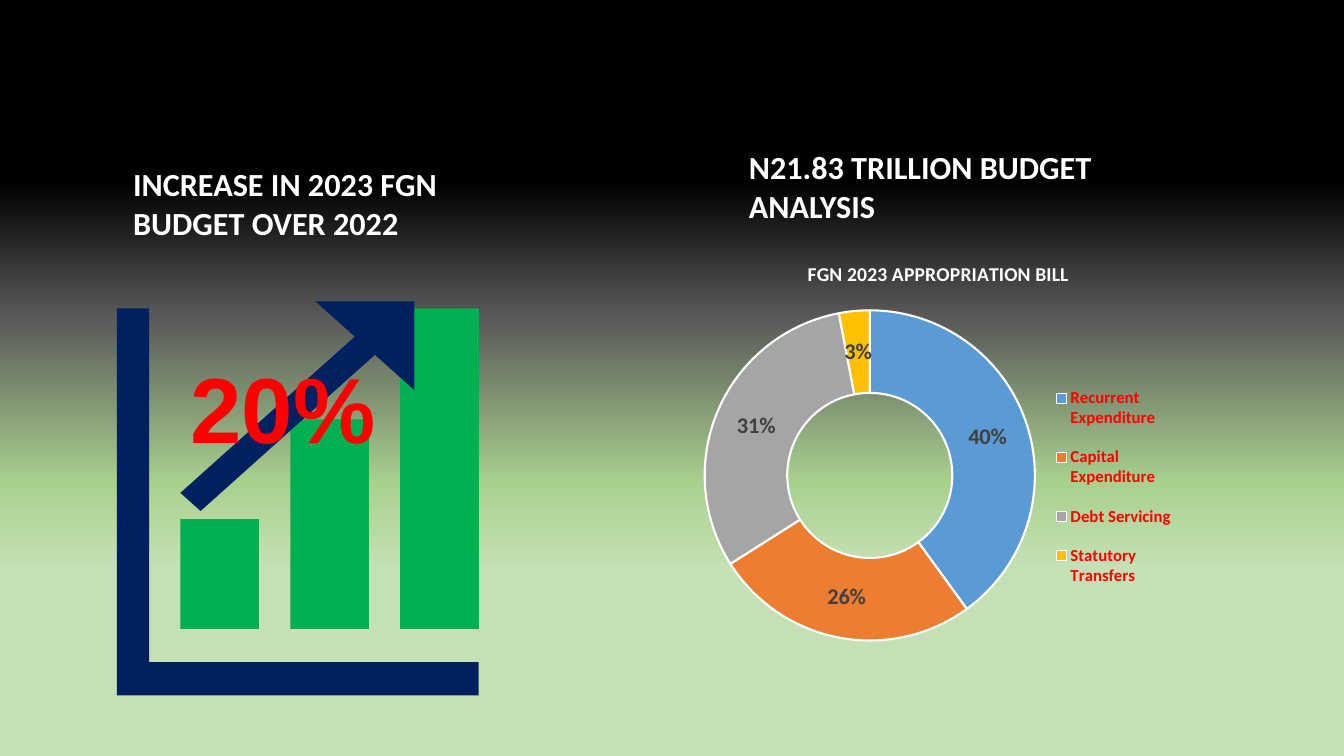
from dataclasses import dataclass

from lxml import etree
from pptx import Presentation
from pptx.chart.data import CategoryChartData
from pptx.dml.color import RGBColor
from pptx.enum.chart import XL_CHART_TYPE, XL_LEGEND_POSITION
from pptx.enum.shapes import MSO_SHAPE
from pptx.enum.text import MSO_ANCHOR, MSO_AUTO_SIZE, PP_ALIGN
from pptx.oxml.ns import qn
from pptx.util import Emu, Inches, Pt

# The slide is a grid of 40 columns by 22.5 rows of square cells.
CELL = Inches(13.333) // 40
COLUMNS, ROWS = 40, 22.5

WHITE = RGBColor(0xFF, 0xFF, 0xFF)
BLACK = RGBColor(0x00, 0x00, 0x00)
RED = RGBColor(0xFF, 0x00, 0x00)
NAVY = RGBColor(0x00, 0x20, 0x60)
GREEN = RGBColor(0x00, 0xB0, 0x50)
BLUE = RGBColor(0x5B, 0x9B, 0xD5)
ORANGE = RGBColor(0xED, 0x7D, 0x31)
GREY = RGBColor(0xA5, 0xA5, 0xA5)
GOLD = RGBColor(0xFF, 0xC0, 0x00)
CHARCOAL = RGBColor(0x40, 0x40, 0x40)
PALE_GREEN = RGBColor(0xC5, 0xE0, 0xB4)
LEAF_GREEN = RGBColor(0xA9, 0xD1, 0x8E)
DARK_GREY = RGBColor(0x59, 0x59, 0x59)

BACKGROUND_STOPS = [(25, PALE_GREEN), (36, LEAF_GREEN), (58, DARK_GREY), (76, BLACK)]


@dataclass(frozen=True)
class Box:
    """A place on the grid, in columns and rows."""
    column: float
    row: float
    width: float
    height: float

    def lengths(self) -> list[Emu]:
        return [cells(n) for n in (self.column, self.row, self.width, self.height)]


@dataclass(frozen=True)
class Expenditure:
    name: str
    share: float
    color: RGBColor


BUDGET = [
    Expenditure("Recurrent Expenditure", 0.40, BLUE),
    Expenditure("Capital Expenditure", 0.26, ORANGE),
    Expenditure("Debt Servicing", 0.31, GREY),
    Expenditure("Statutory Transfers", 0.03, GOLD),
]

INCREASE_HEADING = Box(3.48, 4.8, 10.74, 2.34)
ANALYSIS_HEADING = Box(21.81, 4.29, 13.26, 2.34)
BUDGET_CHART = Box(20.37, 7.2, 15.12, 13.5)

AXES = [(4.44, 9.18), (3.48, 9.18), (3.48, 20.7), (14.25, 20.7), (14.25, 19.71), (4.44, 19.71)]
ARROW = [(12.33, 11.61), (12.33, 8.97), (9.39, 8.97), (10.56, 10.02),
         (5.37, 14.67), (5.97, 15.21), (11.16, 10.56)]
BAR_LEFT, BAR_PITCH, BAR_WIDTH, BAR_BASE = 5.37, 3.27, 2.34, 18.72
BAR_HEIGHTS = [3.27, 6.24, 9.54]


def cells(count: float) -> Emu:
    return Emu(round(count * CELL))


def style_font(font, size: float, color: RGBColor, name: str = "Calibri", bold: bool = True) -> None:
    font.size, font.bold, font.name = Pt(size), bold, name
    font.color.rgb = color


def paint(shape, color: RGBColor) -> None:
    shape.shadow.inherit = False
    shape.fill.solid()
    shape.fill.fore_color.rgb = color
    shape.line.fill.background()


def paint_background(slide) -> None:
    fill = slide.background.fill
    fill.gradient()
    fill.gradient_angle = 90
    stops = next(slide.background._cSld.iter(qn("a:gsLst")))
    for stop in list(stops):
        stops.remove(stop)
    for percent, color in BACKGROUND_STOPS:
        stop = etree.SubElement(stops, qn("a:gs"), pos=str(percent * 1000))
        etree.SubElement(stop, qn("a:srgbClr"), val=str(color))


def write_heading(shape, box: Box, words: str) -> None:
    shape.left, shape.top, shape.width, shape.height = box.lengths()
    frame = shape.text_frame
    frame.word_wrap, frame.auto_size = True, MSO_AUTO_SIZE.NONE
    frame.vertical_anchor = MSO_ANCHOR.MIDDLE
    frame.margin_left, frame.margin_right = Inches(0.16), Inches(0.1)
    frame.margin_top, frame.margin_bottom = Inches(0.1), Inches(0.05)
    paragraph = frame.paragraphs[0]
    paragraph.alignment = PP_ALIGN.LEFT
    run = paragraph.add_run()
    run.text = words
    style_font(run.font, 23, WHITE)


def add_outline(shapes, corners: list[tuple[float, float]], color: RGBColor):
    start, *others = [(cells(x), cells(y)) for x, y in corners]
    builder = shapes.build_freeform(*start)
    builder.add_line_segments(others, close=True)
    outline = builder.convert_to_shape()
    paint(outline, color)
    return outline


def add_growth_icon(slide) -> None:
    shapes = slide.shapes.add_group_shape().shapes
    add_outline(shapes, AXES, NAVY)
    for index, height in enumerate(BAR_HEIGHTS):
        place = Box(BAR_LEFT + index * BAR_PITCH, BAR_BASE - height, BAR_WIDTH, height)
        paint(shapes.add_shape(MSO_SHAPE.RECTANGLE, *place.lengths()), GREEN)
    frame = add_outline(shapes, ARROW, NAVY).text_frame
    frame.word_wrap, frame.vertical_anchor = True, MSO_ANCHOR.MIDDLE
    paragraph = frame.paragraphs[0]
    paragraph.alignment = PP_ALIGN.LEFT
    growth = paragraph.add_run()
    growth.text = "20%"
    style_font(growth.font, 66, RED, "Arial")


def manual_layout(x: float, y: float, w: float, h: float, inner: bool = False):
    """Build a chart layout from shares of the chart's size."""
    layout = etree.Element(qn("c:layout"))
    manual = etree.SubElement(layout, qn("c:manualLayout"))
    settings = [("layoutTarget", "inner")] if inner else []
    settings += [("xMode", "edge"), ("yMode", "edge"), ("x", x), ("y", y), ("w", w), ("h", h)]
    for tag, value in settings:
        etree.SubElement(manual, qn(f"c:{tag}"), val=str(value))
    return layout


def remove_layout(parent) -> None:
    for layout in parent.findall(qn("c:layout")):
        parent.remove(layout)


def add_budget_chart(slide) -> None:
    data = CategoryChartData(number_format="0%")
    data.categories = [item.name for item in BUDGET]
    data.add_series("Series 1", [item.share for item in BUDGET])
    chart = slide.shapes.add_chart(XL_CHART_TYPE.DOUGHNUT, *BUDGET_CHART.lengths(), data).chart
    style_font(chart.font, 10, BLACK, bold=False)

    chart.has_title = True
    title = chart.chart_title.text_frame.paragraphs[0].add_run()
    title.text = "FGN 2023 APPROPRIATION BILL"
    style_font(title.font, 14, WHITE)

    chart.has_legend = True
    legend = chart.legend
    legend.position = XL_LEGEND_POSITION.RIGHT
    legend.include_in_layout = False
    style_font(legend.font, 12, RED)
    remove_layout(legend._element)
    legend._element.find(qn("c:legendPos")).addnext(manual_layout(0.72, 0.28, 0.25, 0.52))

    plot_area = next(chart._chartSpace.iter(qn("c:plotArea")))
    remove_layout(plot_area)
    plot_area.insert(0, manual_layout(0.04, 0.15, 0.65, 0.73, inner=True))
    next(plot_area.iter(qn("c:holeSize"))).set("val", "65")

    plot = chart.plots[0]
    plot.vary_by_categories = True
    series = plot.series[0]
    for index, item in enumerate(BUDGET):
        slice_format = series.points[index].format
        slice_format.fill.solid()
        slice_format.fill.fore_color.rgb = item.color
        slice_format.line.color.rgb = WHITE
        slice_format.line.width = Pt(1.5)
    labels = series.data_labels
    labels.show_value, labels.show_percentage = True, False
    labels.number_format, labels.number_format_is_linked = "0%", False
    style_font(labels.font, 16, CHARCOAL)


def main() -> None:
    deck = Presentation()
    deck.slide_width, deck.slide_height = cells(COLUMNS), cells(ROWS)
    slide = deck.slides.add_slide(deck.slide_layouts[5])
    paint_background(slide)
    write_heading(slide.shapes.title, INCREASE_HEADING, "INCREASE IN 2023 FGN BUDGET OVER 2022")
    analysis = slide.shapes.add_textbox(*ANALYSIS_HEADING.lengths())
    write_heading(analysis, ANALYSIS_HEADING, "N21.83 TRILLION BUDGET ANALYSIS")
    add_growth_icon(slide)
    add_budget_chart(slide)
    deck.save("out.pptx")


if __name__ == "__main__":
    main()
